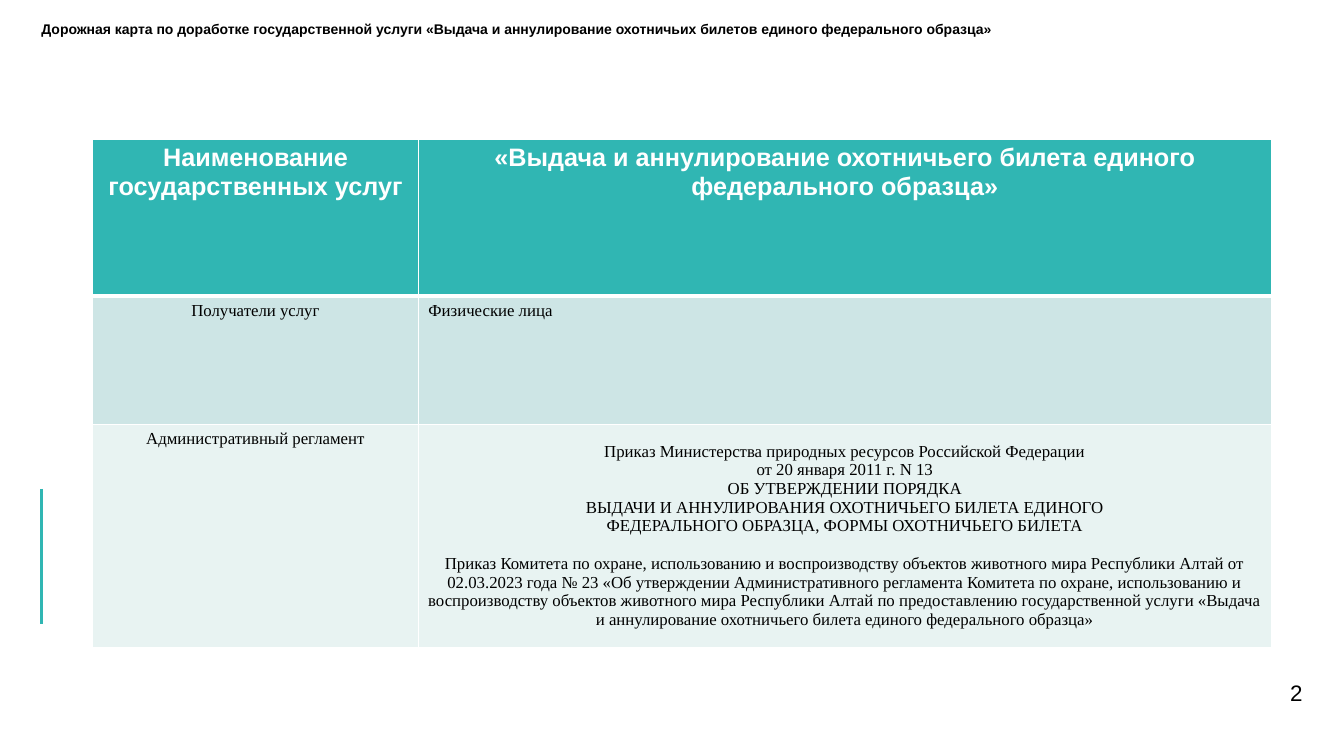
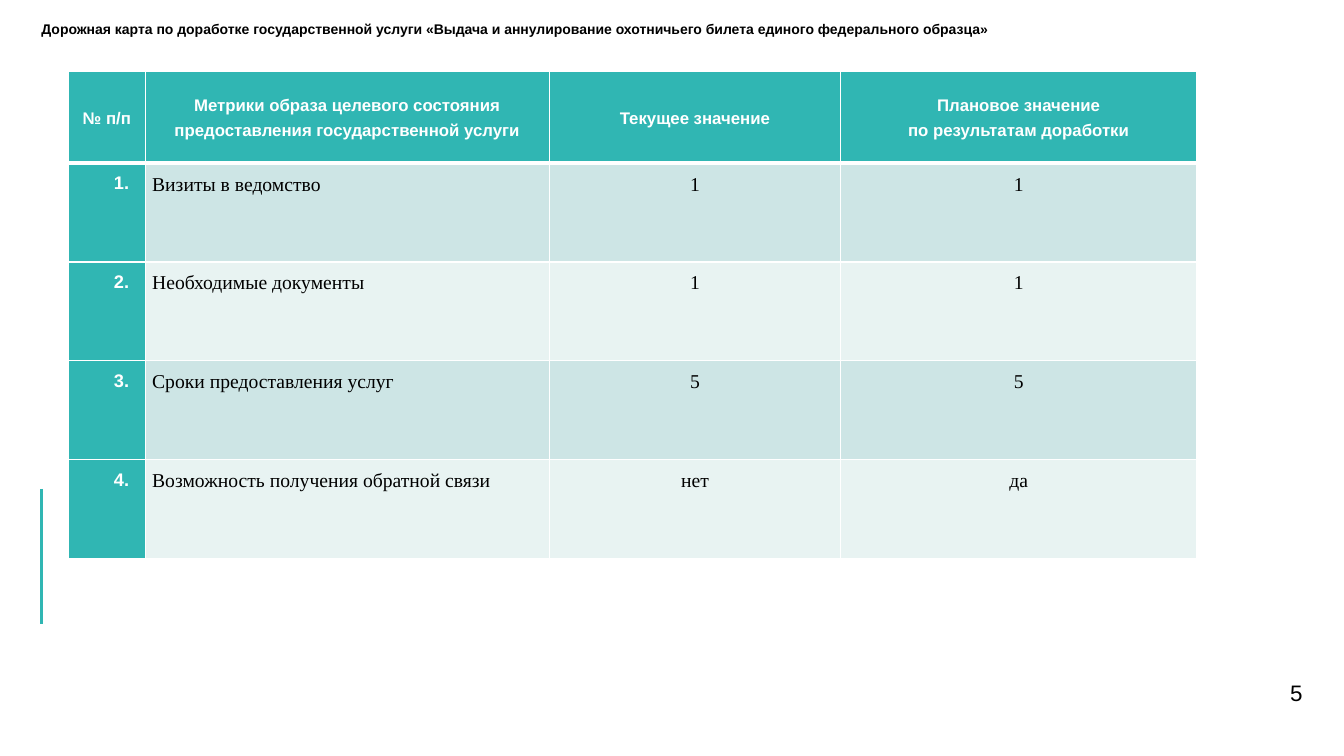
from dataclasses import dataclass

from lxml import etree
from pptx import Presentation
from pptx.dml.color import RGBColor
from pptx.enum.shapes import MSO_CONNECTOR
from pptx.enum.text import MSO_ANCHOR, MSO_AUTO_SIZE, PP_ALIGN
from pptx.oxml.ns import qn
from pptx.util import Inches, Pt

WIDTH, HEIGHT = Inches(13.33), Inches(7.5)
TITLE_ONLY = 5
TOP, MIDDLE = MSO_ANCHOR.TOP, MSO_ANCHOR.MIDDLE
LEFT, CENTER, RIGHT = PP_ALIGN.LEFT, PP_ALIGN.CENTER, PP_ALIGN.RIGHT
NO_AUTOFIT = MSO_AUTO_SIZE.NONE
STRAIGHT = MSO_CONNECTOR.STRAIGHT

TEAL = RGBColor(0x30, 0xB6, 0xB3)
BAND_DARK = RGBColor(0xCD, 0xE5, 0xE5)
BAND_LIGHT = RGBColor(0xE8, 0xF3, 0xF2)
WHITE = RGBColor(0xFF, 0xFF, 0xFF)
BLACK = RGBColor(0x00, 0x00, 0x00)

SANS, SERIF = "Arial", "Times New Roman"
MARGIN_X = 3.08
WIDE_INSETS = (0.1, 0.05, 0.1, 0.05)
FLAT_INSETS = (0.07, 0, 0.07, 0)
METRIC_INSETS = (0.07, 0.04, 0.07, 0.08)
NUMBER_INSETS = (0.45, 0.04, 0.07, 0.08)


@dataclass(frozen=True)
class CellStyle:
    size: int
    font: str = SERIF
    color: RGBColor = BLACK
    bold: bool = False
    align: int = CENTER
    anchor: int = TOP
    insets: tuple = WIDE_INSETS
    spacing: float = 1.0
    fill: RGBColor = None


SERVICE_HEAD = CellStyle(18, SANS, WHITE, True)
SERVICE_NAME = CellStyle(12)
SERVICE_TEXT = CellStyle(12, align=LEFT)
REGULATION = CellStyle(12, anchor=MIDDLE, insets=FLAT_INSETS)
METRIC_HEAD = CellStyle(12, SANS, WHITE, True, anchor=MIDDLE,
                        insets=METRIC_INSETS, spacing=1.3)
METRIC_NUMBER = CellStyle(13, SANS, WHITE, True, LEFT,
                          insets=NUMBER_INSETS, spacing=1.3, fill=TEAL)
METRIC_NAME = CellStyle(14, align=LEFT, insets=METRIC_INSETS, spacing=1.3)
METRIC_VALUE = CellStyle(14, insets=METRIC_INSETS, spacing=1.3)

SERVICE_ROWS = [
    ["Наименование государственных услуг",
     "«Выдача и аннулирование охотничьего билета единого федерального образца»"],
    ["Получатели услуг", "Физические лица"],
    ["Административный регламент",
     "Приказ Министерства природных ресурсов Российской Федерации\n"
     "от 20 января 2011 г. N 13\n"
     "ОБ УТВЕРЖДЕНИИ ПОРЯДКА\n"
     "ВЫДАЧИ И АННУЛИРОВАНИЯ ОХОТНИЧЬЕГО БИЛЕТА ЕДИНОГО\n"
     "ФЕДЕРАЛЬНОГО ОБРАЗЦА, ФОРМЫ ОХОТНИЧЬЕГО БИЛЕТА\n"
     "Приказ Комитета по охране, использованию и воспроизводству объектов "
     "животного мира Республики Алтай от 02.03.2023 года № 23 «Об утверждении "
     "Административного регламента Комитета по охране, использованию и "
     "воспроизводству объектов животного мира Республики Алтай по "
     "предоставлению государственной услуги «Выдача и аннулирование "
     "охотничьего билета единого федерального образца»"],
]
SERVICE_STYLES = [
    [SERVICE_HEAD, SERVICE_HEAD],
    [SERVICE_NAME, SERVICE_TEXT],
    [SERVICE_NAME, REGULATION],
]

METRIC_ROWS = [
    ["№ п/п",
     "Метрики образа целевого состояния предоставления государственной услуги",
     "Текущее значение",
     "Плановое значение\nпо результатам доработки"],
    ["1.", "Визиты в ведомство", "1", "1"],
    ["2.", "Необходимые документы", "1", "1"],
    ["3.", "Сроки предоставления услуг", "5", "5"],
    ["4.", "Возможность получения обратной связи", "нет", "да"],
]
METRIC_STYLES = [[METRIC_HEAD] * 4] + [
    [METRIC_NUMBER, METRIC_NAME, METRIC_VALUE, METRIC_VALUE]] * 4


def across(percent):
    return round(WIDTH * percent / 100)


def down(percent):
    return round(HEIGHT * percent / 100)


def write(tf, text, size, font, color, bold=False, align=LEFT, spacing=1.0):
    tf.text = text
    for p in tf.paragraphs:
        p.alignment = align
        p.line_spacing = spacing
        p.space_before = Pt(0)
        for r in p.runs:
            r.font.size = Pt(size)
            r.font.name = font
            r.font.bold = bold
            r.font.color.rgb = color


def frame(tf, anchor):
    tf.margin_left = tf.margin_top = tf.margin_right = tf.margin_bottom = 0
    tf.word_wrap = True
    tf.auto_size = NO_AUTOFIT
    tf.vertical_anchor = anchor


def add_slide(prs, title, number):
    s = prs.slides.add_slide(prs.slide_layouts[TITLE_ONLY])
    sp = s.shapes.title
    sp.left, sp.top = across(MARGIN_X), down(2.93)
    sp.width, sp.height = across(82.9), down(5.2)
    frame(sp.text_frame, TOP)
    write(sp.text_frame, title, 10, SANS, BLACK, bold=True, spacing=0.9)

    sp = s.shapes.add_textbox(across(88.97), down(88.8), across(7.95), down(5.73))
    frame(sp.text_frame, MIDDLE)
    write(sp.text_frame, str(number), 16, SANS, BLACK, align=RIGHT)

    line = s.shapes.add_connector(STRAIGHT, across(MARGIN_X), down(64.67),
                                  across(MARGIN_X), down(82.53))
    line.line.color.rgb = TEAL
    line.line.width = Pt(2.25)
    etree.SubElement(line._element.spPr, qn("a:effectLst"))
    return s


def set_borders(cell, widths):
    tcPr = cell._tc.get_or_add_tcPr()
    for i, (side, width) in enumerate(widths.items()):
        ln = etree.Element(qn("a:ln" + side), w=str(Pt(width)))
        fill = etree.SubElement(ln, qn("a:solidFill"))
        etree.SubElement(fill, qn("a:srgbClr"), val=str(WHITE))
        tcPr.insert(i, ln)


def fill_cell(cell, text, style, fill, widths):
    write(cell.text_frame, text, style.size, style.font, style.color,
          style.bold, style.align, style.spacing)
    (cell.margin_left, cell.margin_top,
     cell.margin_right, cell.margin_bottom) = map(Inches, style.insets)
    cell.vertical_anchor = style.anchor
    cell.fill.solid()
    cell.fill.fore_color.rgb = style.fill or fill
    set_borders(cell, widths)


def add_table(s, left, top, cols, rows, texts, styles):
    table = s.shapes.add_table(len(rows), len(cols), across(left), down(top),
                               across(sum(cols)), down(sum(rows))).table
    for col, width in zip(table.columns, cols):
        col.width = across(width)
    for i, height in enumerate(rows):
        table.rows[i].height = down(height)
        fill = TEAL if i == 0 else BAND_DARK if i % 2 else BAND_LIGHT
        widths = {"L": 1, "R": 1, "T": 3 if i == 1 else 1, "B": 3 if i == 0 else 1}
        for j, (text, style) in enumerate(zip(texts[i], styles[i])):
            fill_cell(table.cell(i, j), text, style, fill, widths)
    return table


def main():
    prs = Presentation()
    prs.slide_width, prs.slide_height = WIDTH, HEIGHT

    s = add_slide(prs, "Дорожная карта по доработке государственной услуги «Выдача и "
                       "аннулирование охотничьих билетов единого федерального образца»", 2)
    table = add_table(s, 6.9, 18.4, [24.23, 63.47], [20.8, 16.93, 29.47],
                      SERVICE_ROWS, SERVICE_STYLES)
    table.cell(2, 1).text_frame.paragraphs[-1].space_before = Pt(13.8)

    s = add_slide(prs, "Дорожная карта по доработке государственной услуги «Выдача и "
                       "аннулирование охотничьего билета единого федерального образца»", 5)
    add_table(s, 5.1, 9.47, [5.7, 30.08, 21.68, 26.48], [12.13] + [13.07] * 4,
              METRIC_ROWS, METRIC_STYLES)

    prs.save("out.pptx")


if __name__ == "__main__":
    main()
